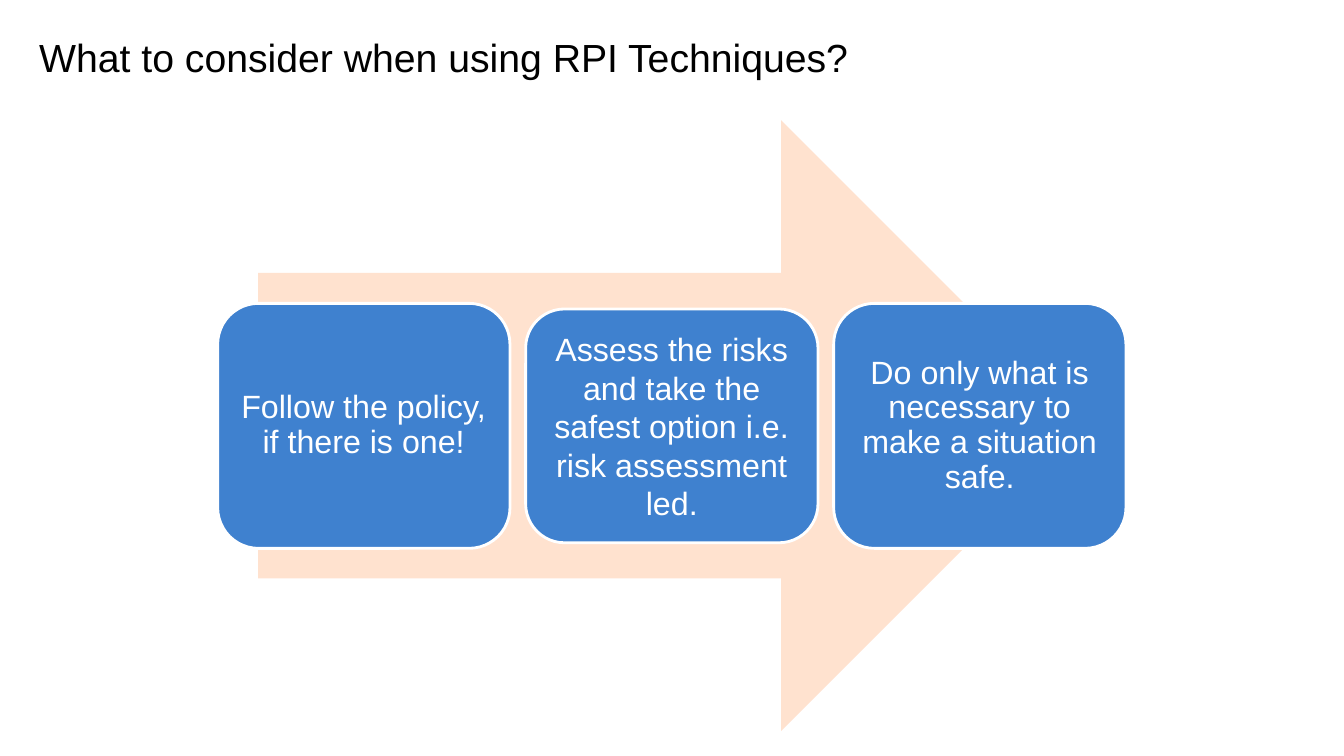
from dataclasses import dataclass

import pptx
import pptx.dml.color
import pptx.enum.shapes
import pptx.enum.text
import pptx.util

Pt = pptx.util.Pt
RGBColor = pptx.dml.color.RGBColor
Preset = pptx.enum.shapes.MSO_SHAPE
Anchor = pptx.enum.text.MSO_ANCHOR
Align = pptx.enum.text.PP_ALIGN


@dataclass(frozen=True)
class Theme:
    font: str = "Arial"
    title_size: float = 28
    step_size: float = 23
    black: RGBColor = RGBColor(0x00, 0x00, 0x00)
    white: RGBColor = RGBColor(0xFF, 0xFF, 0xFF)
    blue: RGBColor = RGBColor(0x3F, 0x81, 0xCF)
    peach: RGBColor = RGBColor(0xFF, 0xE2, 0xCF)


THEME = Theme()

# Each step: wording, box height, line spacing
STEPS = [
    ("Follow the policy, if there is one!", 175, 0.9),
    ("Assess the risks and take the safest option i.e. risk assessment led.", 167, 1.0),
    ("Do only what is necessary to make a situation safe.", 175, 0.9),
]
STEP_LEFT, STEP_WIDTH, STEP_PITCH, STEP_MIDDLE = 155.5, 208.8, 220, 304.2


def write_text(shape, text, size, color, anchor, alignment, line_spacing=1.0):
    frame = shape.text_frame
    frame.text = text
    frame.word_wrap = True
    frame.vertical_anchor = anchor
    frame.margin_left = frame.margin_right = Pt(7.2)
    frame.margin_top = frame.margin_bottom = Pt(7.2)
    paragraph = frame.paragraphs[0]
    paragraph.alignment = alignment
    paragraph.line_spacing = line_spacing
    font = paragraph.runs[0].font
    font.name = THEME.font
    font.size = Pt(size)
    font.color.rgb = color


def add_title(slide, text):
    box = slide.shapes.add_textbox(Pt(20.9), Pt(16.6), Pt(913), Pt(108))
    write_text(box, text, THEME.title_size, THEME.black, Anchor.TOP, Align.LEFT)


def add_filled_shape(slide, preset, left, top, width, height, fill):
    shape = slide.shapes.add_shape(preset, Pt(left), Pt(top), Pt(width), Pt(height))
    shape.shadow.inherit = False
    shape.fill.solid()
    shape.fill.fore_color.rgb = fill
    shape.line.fill.background()
    return shape


def add_step(slide, index, text, height, line_spacing):
    box = add_filled_shape(
        slide, Preset.ROUNDED_RECTANGLE,
        STEP_LEFT + index * STEP_PITCH, STEP_MIDDLE - height / 2,
        STEP_WIDTH, height, THEME.blue)
    box.line.color.rgb = THEME.white
    box.line.width = Pt(2)
    write_text(box, text, THEME.step_size, THEME.white,
               Anchor.MIDDLE, Align.CENTER, line_spacing)


def main():
    presentation = pptx.Presentation()
    presentation.slide_width = Pt(960)
    presentation.slide_height = Pt(540)
    slide = presentation.slides.add_slide(presentation.slide_layouts[6])

    # Heading
    add_title(slide, "What to consider when using RPI Techniques?")

    # Arrow behind the steps
    add_filled_shape(slide, Preset.RIGHT_ARROW, 184.3, 85.8, 591.8, 436.4, THEME.peach)

    # Steps from left to right
    for index, (text, height, line_spacing) in enumerate(STEPS):
        add_step(slide, index, text, height, line_spacing)

    presentation.save("out.pptx")


if __name__ == "__main__":
    main()
